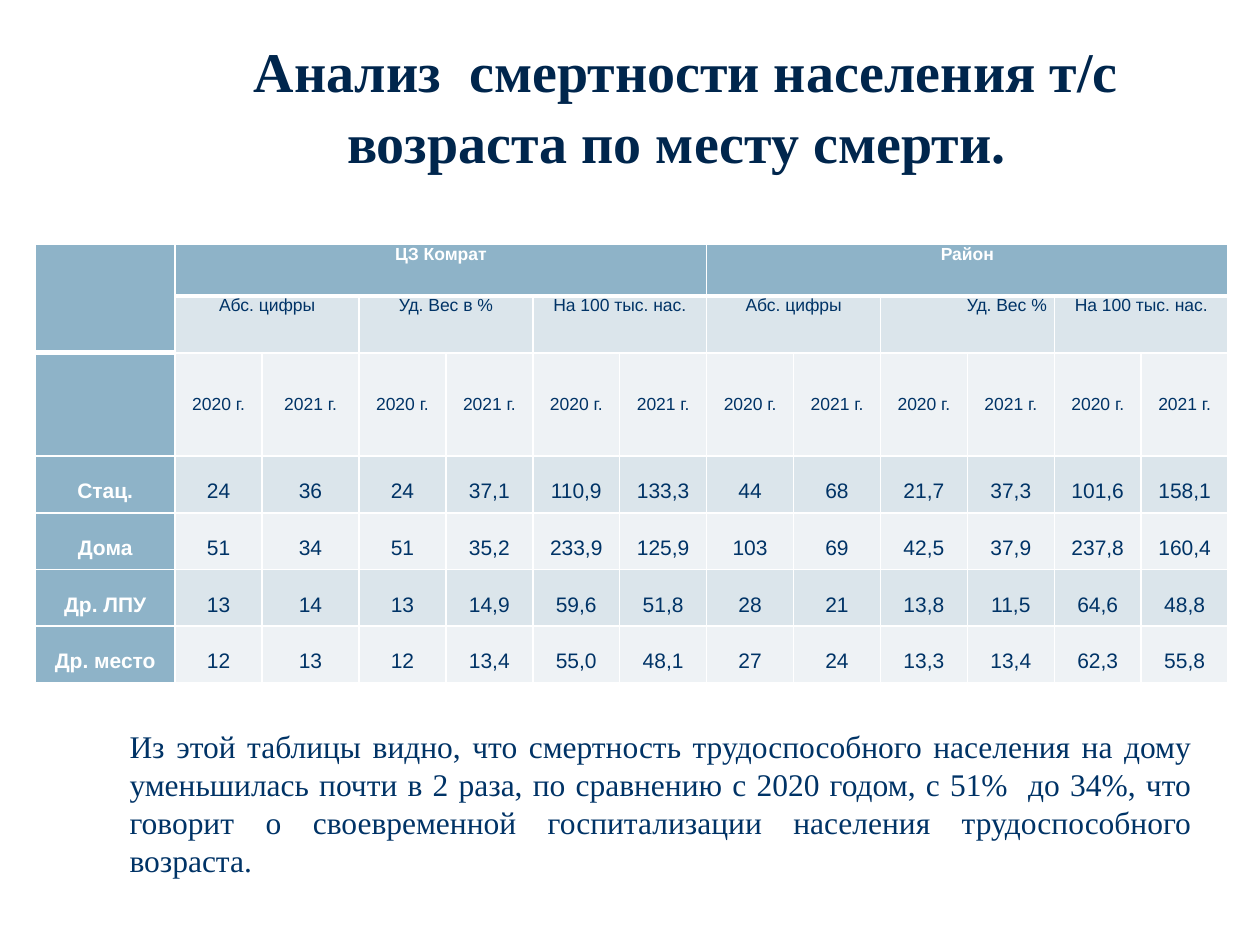
from dataclasses import dataclass
from typing import Any

from lxml import etree
from pptx import Presentation
from pptx.dml.color import RGBColor
from pptx.enum import text
from pptx.oxml import ns
from pptx.util import Inches, Pt

WHITE = RGBColor(0xFF, 0xFF, 0xFF)
NAVY = RGBColor(0x00, 0x26, 0x4D)
BLUE = RGBColor(0x00, 0x33, 0x66)
STEEL = RGBColor(0x8E, 0xB3, 0xC8)
BANDS = (RGBColor(0xDB, 0xE5, 0xEB), RGBColor(0xEE, 0xF2, 0xF5))

WIDTH, HEIGHT = Inches(10), Inches(7.5)
COLS = [1.11, 0.69, 0.77] + [0.69] * 10
ROWS = [0.41, 0.45, 0.82] + [0.45] * 4
ALIGN = text.PP_ALIGN
TOP, MIDDLE = text.MSO_ANCHOR.TOP, text.MSO_ANCHOR.MIDDLE

TITLE_FONT = {"name": "Times New Roman", "size": Pt(32), "bold": True}
LEAD_FONT = {"name": "Roboto", "size": Pt(44), "bold": True}
BODY_FONT = {"name": "Times New Roman", "size": Pt(18), "bold": False}


@dataclass
class Entry:
    row: int
    col: int
    label: str
    rows: int = 1
    cols: int = 1
    size: int = 10
    align: Any = ALIGN.CENTER
    anchor: Any = TOP
    spacing: float = 1.0


GROUPS = ["ЦЗ Комрат", "Район"]
MEASURES = ["Абс. цифры", "Уд. Вес в %", "На 100 тыс. нас.",
            "Абс. цифры", "Уд. Вес %", "На 100 тыс. нас."]
YEARS = ["2020 г.", "2021 г."]
PLACES = {
    "Стац.": "24 36 24 37,1 110,9 133,3 44 68 21,7 37,3 101,6 158,1",
    "Дома": "51 34 51 35,2 233,9 125,9 103 69 42,5 37,9 237,8 160,4",
    "Др. ЛПУ": "13 14 13 14,9 59,6 51,8 28 21 13,8 11,5 64,6 48,8",
    "Др. место": "12 13 12 13,4 55,0 48,1 27 24 13,3 13,4 62,3 55,8",
}
TITLE = "Анализ  смертности населения т/с возраста по месту смерти."
CONCLUSION = (
    "Из этой таблицы видно, что смертность трудоспособного населения на дому "
    "уменьшилась почти в 2 раза, по сравнению с 2020 годом, с 51%  до 34%, что "
    "говорит о своевременной госпитализации населения трудоспособного возраста."
)


def apply(obj: Any, values: dict) -> None:
    for name, value in values.items():
        setattr(obj, name, value)


def add_run(p: Any, label: str, color: RGBColor, font: dict) -> None:
    r = p.add_run()
    r.text = label
    apply(r.font, font)
    r.font.color.rgb = color


def add_box(s: Any, x: float, y: float, w: float, h: float, anchor: Any) -> Any:
    sp = s.shapes.add_textbox(int(WIDTH * x), int(HEIGHT * y),
                              int(WIDTH * w), int(HEIGHT * h))
    apply(sp.text_frame, {"word_wrap": True, "vertical_anchor": anchor})
    return sp.text_frame.paragraphs[0]


def border_width(row: int, col: int, side: str) -> int:
    header_end = 1 if col == 0 else 0
    heavy = (side == "B" and row <= header_end) or (side == "T" and row == header_end + 1)
    return 3 if heavy else 1


def style_cell(cell: Any, row: int, col: int) -> None:
    apply(cell, {"margin_left": Inches(0.06), "margin_right": Inches(0.06),
                 "margin_top": 0, "margin_bottom": 0})
    cell.fill.solid()
    cell.fill.fore_color.rgb = STEEL if row == 0 or col == 0 else BANDS[(row + 1) % 2]
    tc_pr = cell._tc.get_or_add_tcPr()
    for i, side in enumerate("LRTB"):
        ln = etree.Element(ns.qn(f"a:ln{side}"), w=str(Pt(border_width(row, col, side))))
        fill = etree.SubElement(ln, ns.qn("a:solidFill"))
        etree.SubElement(fill, ns.qn("a:srgbClr"), val=str(WHITE))
        tc_pr.insert(i, ln)


def table_entries() -> list[Entry]:
    entries = [Entry(0, 0, "", rows=2)]
    entries += [Entry(0, 1 + 6 * i, g, cols=6) for i, g in enumerate(GROUPS)]
    entries += [Entry(1, 1 + 2 * i, m, cols=2,
                      align=ALIGN.RIGHT if m == "Уд. Вес %" else ALIGN.CENTER)
                for i, m in enumerate(MEASURES)]
    entries += [Entry(2, 1 + i, y, anchor=MIDDLE)
                for i, y in enumerate(YEARS * len(MEASURES))]
    for row, (place, values) in enumerate(PLACES.items(), 3):
        entries += [Entry(row, col, v, size=12, spacing=2.0)
                    for col, v in enumerate([place] + values.split())]
    return entries


def fill_entry(table: Any, e: Entry) -> None:
    cell = table.cell(e.row, e.col)
    if e.rows * e.cols > 1:
        cell.merge(table.cell(e.row + e.rows - 1, e.col + e.cols - 1))
    if not e.label:
        return
    cell.vertical_anchor = e.anchor
    p = cell.text_frame.paragraphs[0]
    apply(p, {"alignment": e.align, "line_spacing": e.spacing})
    header = e.row == 0 or e.col == 0
    add_run(p, e.label, WHITE if header else BLUE,
            {"name": "Arial", "size": Pt(e.size), "bold": header})


def add_mortality_table(s: Any) -> None:
    table = s.shapes.add_table(len(ROWS), len(COLS), Inches(0.28), Inches(1.94),
                               Inches(sum(COLS)), Inches(sum(ROWS))).table
    for column, width in zip(table.columns, COLS):
        column.width = Inches(width)
    for row, height in zip(table.rows, ROWS):
        row.height = Inches(height)
    for row in range(len(ROWS)):
        for col in range(len(COLS)):
            style_cell(table.cell(row, col), row, col)
    for entry in table_entries():
        fill_entry(table, entry)


def main() -> None:
    prs = Presentation()
    apply(prs, {"slide_width": WIDTH, "slide_height": HEIGHT})
    s = prs.slides.add_slide(prs.slide_layouts[6])

    p = add_box(s, 0.133, 0.023, 0.808, 0.156, MIDDLE)
    p.alignment = ALIGN.CENTER
    add_run(p, " ", WHITE, LEAD_FONT)
    add_run(p, TITLE, NAVY, TITLE_FONT)

    add_mortality_table(s)

    p = add_box(s, 0.043, 0.763, 0.913, 0.175, TOP)
    p.alignment = ALIGN.JUSTIFY
    apply_indent = {"marL": str(Inches(0.5)), "indent": "0"}
    for name, value in apply_indent.items():
        p._p.get_or_add_pPr().set(name, value)
    add_run(p, CONCLUSION, BLUE, BODY_FONT)

    prs.save("out.pptx")


if __name__ == "__main__":
    main()
